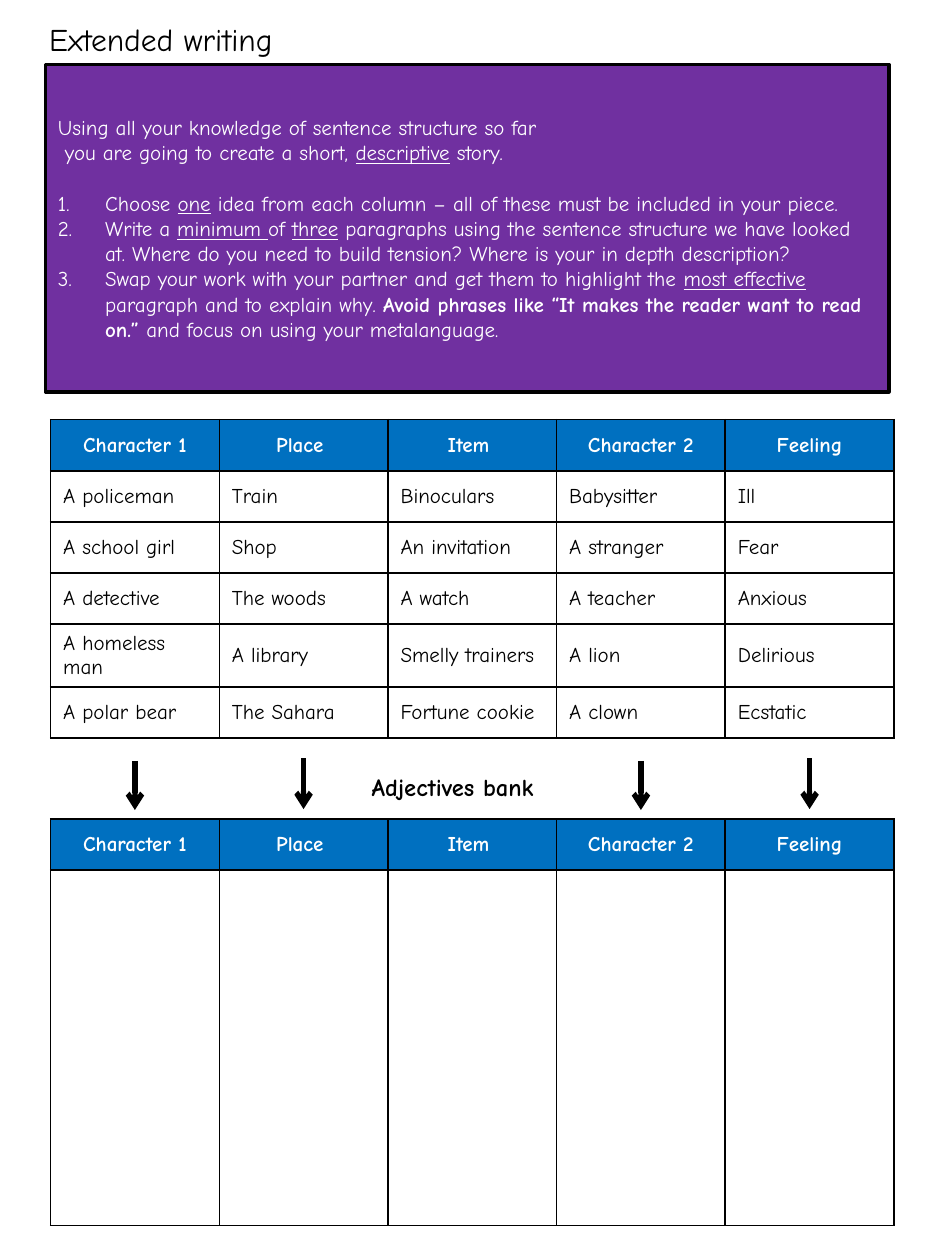
from dataclasses import dataclass
from typing import Any

from lxml import etree
from pptx import Presentation
from pptx import util as u
from pptx.dml.color import RGBColor
from pptx.enum import shapes, text
from pptx.oxml import ns

FONT = "Comic Neue"
BLACK, WHITE, PURPLE, BLUE = "000000", "FFFFFF", "7030A0", "0070C0"

TABLE_LEFT = 1.02
COLUMN_WIDTH = 3.4
ROW_HEIGHT = 1.03
HEADINGS = ["Character 1", "Place ", "Item ", "Character 2", "Feeling"]
IDEAS = [
    ["A policeman", "Train", "Binoculars", "Babysitter", "Ill"],
    ["A school girl", "Shop", "An invitation", "A stranger", "Fear"],
    ["A detective", "The woods", "A watch", "A teacher", "Anxious"],
    ["A homeless man", "A library", "Smelly trainers", "A lion", "Delirious"],
    ["A polar bear", "The Sahara", "Fortune cookie", "A clown", "Ecstatic"],
]


@dataclass
class Run:
    text: str
    underline: bool = False
    bold: bool = False


@dataclass
class Arrow:
    column: int
    top: float
    bottom: float


INTRODUCTION = [
    [Run("Using all your knowledge of sentence structure so far")],
    [Run(" you are going to create a short, "), Run("descriptive", underline=True),
     Run(" story.")],
]
STEPS = [
    [Run("Choose "), Run("one", underline=True),
     Run(" idea from each column – all of these must be included in your piece.")],
    [Run("Write a "), Run("minimum ", underline=True), Run("of "),
     Run("three", underline=True),
     Run(" paragraphs using the sentence structure we have looked at. "
         "Where do you need to build tension? Where is your in depth description?")],
    [Run("Swap your work with your partner and get them to highlight the "),
     Run("most effective ", underline=True), Run("paragraph and to explain why. "),
     Run("Avoid phrases like “It makes the reader want to read on.” ", bold=True),
     Run("and focus on using your metalanguage.")],
]
ARROWS = [Arrow(0, 15.34, 16.33), Arrow(1, 15.29, 16.31),
          Arrow(3, 15.34, 16.33), Arrow(4, 15.29, 16.31)]


def colour(value: str) -> RGBColor:
    return RGBColor.from_string(value)


def add_element(parent: Any, tag: str, **attributes: str) -> Any:
    return etree.SubElement(parent, ns.qn(tag), attributes)


def write(paragraph: Any, content: str | list[Run], *, size: float = 12,
          fill: str = BLACK, bold: bool = False, centred: bool = False,
          numbered: bool = False, space_before: float = 0) -> None:
    paragraph.alignment = text.PP_ALIGN.CENTER if centred else text.PP_ALIGN.LEFT
    paragraph.space_before = u.Pt(space_before)
    if numbered:
        properties = paragraph._p.get_or_add_pPr()
        properties.set("marL", str(u.Cm(0.95)))
        properties.set("indent", str(u.Cm(-0.95)))
        add_element(properties, "a:buFont", typeface="+mj-lt")
        add_element(properties, "a:buAutoNum", type="arabicPeriod")
    for part in [Run(content)] if isinstance(content, str) else content:
        run = paragraph.add_run()
        run.text = part.text
        run.font.name = FONT
        run.font.size = u.Pt(size)
        run.font.color.rgb = colour(fill)
        run.font.bold = bold or part.bold
        run.font.underline = part.underline


def add_label(slide: Any, content: str, left: float, top: float, width: float,
              height: float, **style: Any) -> None:
    label = slide.shapes.add_textbox(u.Cm(left), u.Cm(top), u.Cm(width), u.Cm(height))
    label.text_frame.word_wrap = False
    label.text_frame.auto_size = text.MSO_AUTO_SIZE.SHAPE_TO_FIT_TEXT
    write(label.text_frame.paragraphs[0], content, **style)


def add_instructions(slide: Any) -> None:
    box = slide.shapes.add_shape(shapes.MSO_SHAPE.RECTANGLE, u.Cm(0.92), u.Cm(1.3),
                                 u.Cm(17), u.Cm(6.6))
    box.shadow.inherit = False
    box.fill.solid()
    box.fill.fore_color.rgb = colour(PURPLE)
    box.line.color.rgb = colour(BLACK)
    box.line.width = u.Pt(2)
    frame = box.text_frame
    frame.word_wrap = True
    frame.vertical_anchor = text.MSO_ANCHOR.MIDDLE
    for index, content in enumerate(INTRODUCTION + STEPS):
        paragraph = frame.add_paragraph() if index else frame.paragraphs[0]
        first_step = index == len(INTRODUCTION)
        write(paragraph, content, fill=WHITE, numbered=index >= len(INTRODUCTION),
              space_before=14.4 if first_step else 0)


def format_cell(cell: Any, content: str, header: bool) -> None:
    """Fill, border and write one table cell."""
    properties = cell._tc.get_or_add_tcPr()
    for side in ("L", "R", "T", "B"):
        border = add_element(properties, f"a:ln{side}", w=str(u.Pt(1)))
        add_element(add_element(border, "a:solidFill"), "a:srgbClr", val=BLACK)
    cell.fill.solid()
    cell.fill.fore_color.rgb = colour(BLUE if header else WHITE)
    cell.vertical_anchor = text.MSO_ANCHOR.MIDDLE
    if content:
        write(cell.text_frame.paragraphs[0], content, fill=WHITE if header else BLACK,
              bold=header, centred=header)


def add_word_table(slide: Any, top: float, body: list[list[str]],
                   body_height: float) -> None:
    rows = [HEADINGS] + body
    heights = [ROW_HEIGHT] + [body_height] * len(body)
    table = slide.shapes.add_table(
        len(rows), len(HEADINGS), u.Cm(TABLE_LEFT), u.Cm(top),
        u.Cm(COLUMN_WIDTH * len(HEADINGS)), u.Cm(sum(heights))).table
    for column in table.columns:
        column.width = u.Cm(COLUMN_WIDTH)
    for row_index, (words, height) in enumerate(zip(rows, heights)):
        table.rows[row_index].height = u.Cm(height)
        for column_index, word in enumerate(words):
            format_cell(table.cell(row_index, column_index), word, row_index == 0)


def add_arrow(slide: Any, arrow: Arrow) -> None:
    centre = u.Cm(TABLE_LEFT + COLUMN_WIDTH * (arrow.column + 0.5))
    connector = slide.shapes.add_connector(
        shapes.MSO_CONNECTOR.STRAIGHT, centre, u.Cm(arrow.top), centre, u.Cm(arrow.bottom))
    connector.line.color.rgb = colour(BLACK)
    connector.line.width = u.Pt(3)
    add_element(connector.line._get_or_add_ln(), "a:tailEnd", type="arrow")
    add_element(connector._element.spPr, "a:effectLst")


def main() -> None:
    presentation = Presentation()
    presentation.slide_width = u.Cm(19.05)
    presentation.slide_height = u.Cm(25.4)
    slide = presentation.slides.add_slide(presentation.slide_layouts[6])

    add_instructions(slide)
    add_label(slide, "Extended writing", 0.74, 0.28, 5.66, 1.02, size=18)
    add_word_table(slide, 8.46, IDEAS, ROW_HEIGHT)
    add_label(slide, "Adjectives bank", 7.24, 15.44, 4.6, 0.86, size=14, bold=True)
    add_word_table(slide, 16.51, [[""] * len(HEADINGS)], 7.16)
    for arrow in ARROWS:
        add_arrow(slide, arrow)

    presentation.save("out.pptx")


if __name__ == "__main__":
    main()
